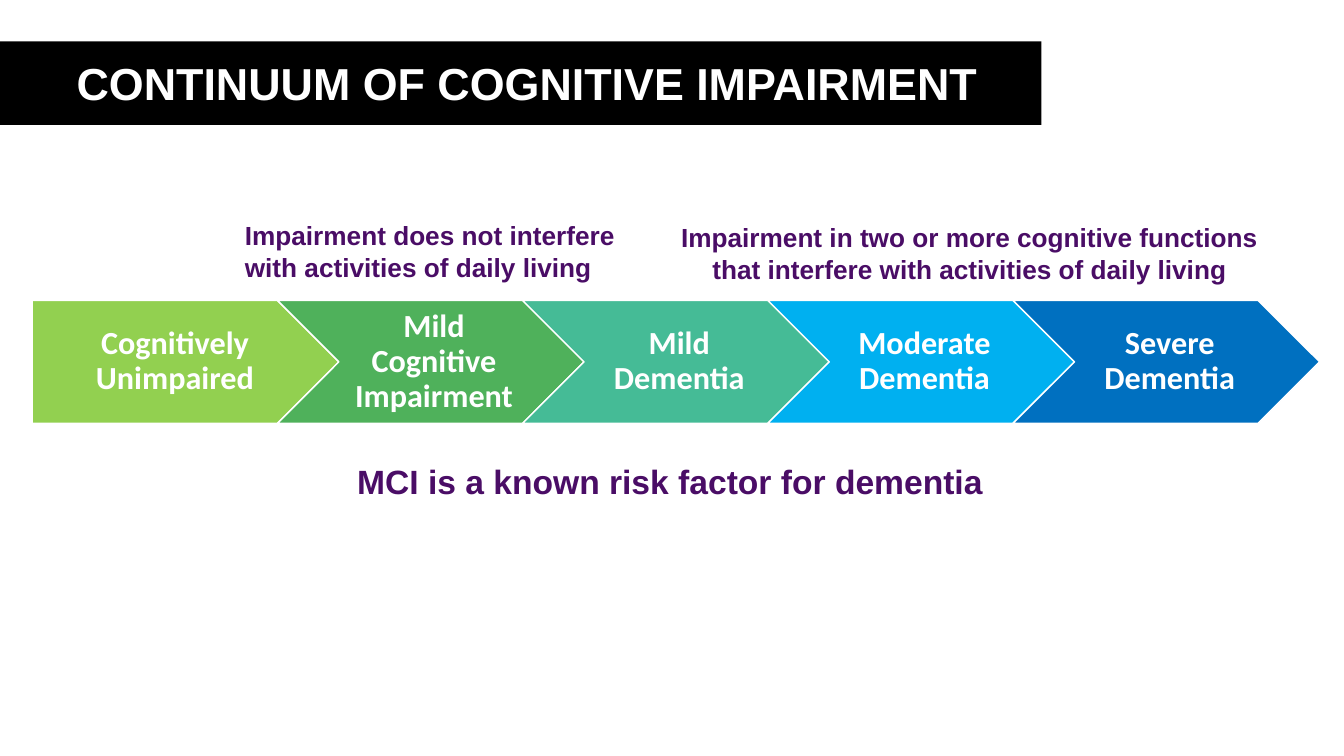
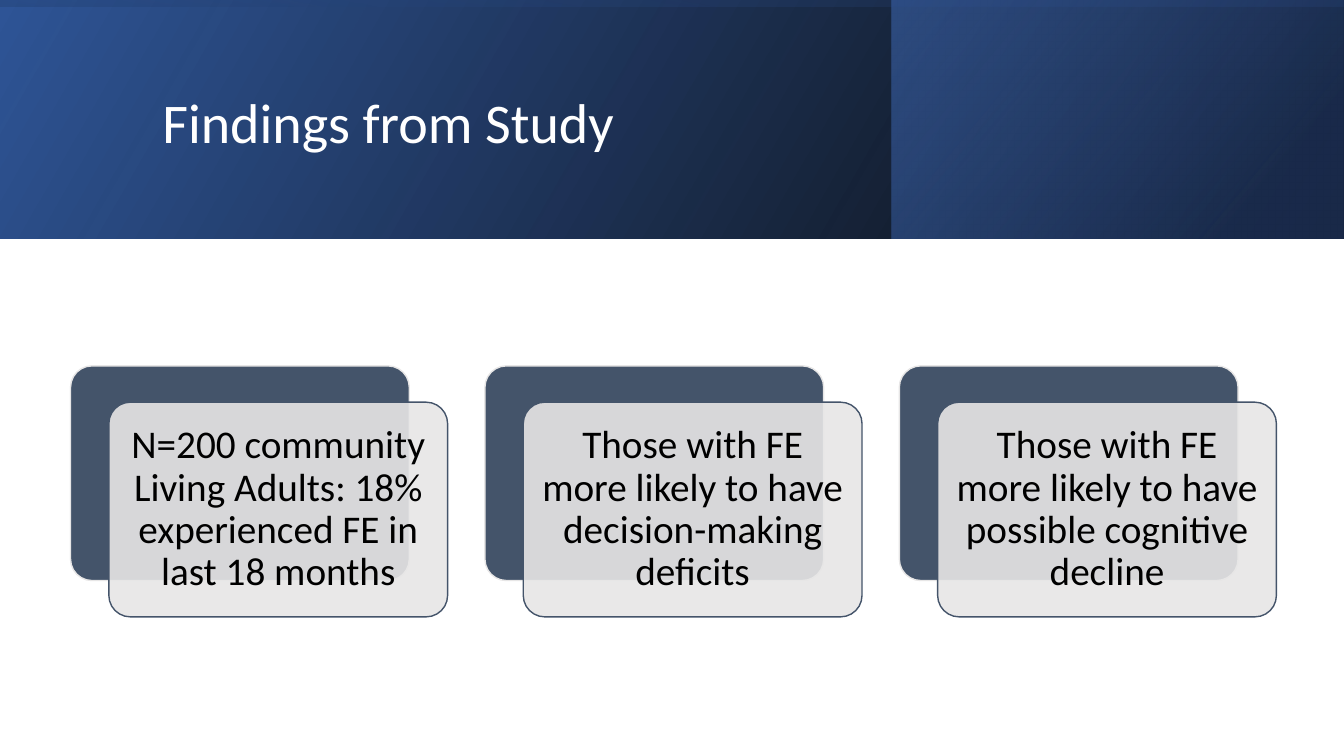
from dataclasses import dataclass

from lxml import etree
from pptx import Presentation, util as u
from pptx.dml.color import RGBColor
from pptx.enum import shapes, text
from pptx.oxml import ns

SLIDE_WIDTH, SLIDE_HEIGHT = 13.33, 7.5
TITLE_ONLY = 5


@dataclass(frozen=True)
class Theme:
    heading_font: str = "Arial"
    body_font: str = "Calibri"
    white: str = "FFFFFF"
    black: str = "000000"
    purple: str = "4A0D66"
    slate: str = "44546A"
    pale: str = "E7E6E6"
    stage_fills: tuple = ("92D050", "4FB15B", "45BB96", "00B0F0", "0070C0")
    banner_title_size: float = 32
    study_title_size: float = 40
    stage_size: float = 23
    card_size: float = 28
    remark_size: float = 24
    note_size: float = 18.7


THEME = Theme()
CENTER, LEFT = text.PP_ALIGN.CENTER, text.PP_ALIGN.LEFT

STAGES = ("Cognitively Unimpaired", "Mild Cognitive Impairment", "Mild Dementia",
          "Moderate Dementia", "Severe Dementia")
FINDINGS = (
    "N=200 community Living Adults: 18% experienced FE in last 18 months",
    "Those with FE more likely to have decision-making deficits",
    "Those with FE more likely to have possible cognitive decline",
)

# Stop: position %, colour, opacity %
HEADER_LAYERS = (
    dict(box=(0, 0, SLIDE_WIDTH, 2.37), angle=330,
         stops=((0, "000000", 96), (100, "2F5597", 100))),
    dict(box=(8.84, 0, 4.48, 2.37), angle=320,
         stops=((19, "203864", 68), (100, "4472C4", 48))),
    dict(box=(5.48, -5.48, 2.37, SLIDE_WIDTH), angle=350, rotation=270,
         stops=((23, "2F5597", 16), (99, "000000", 45))),
)


def inches(box):
    return [u.Inches(length) for length in box]


def rgb(colour):
    return RGBColor.from_string(colour)


def set_opacity(colour_element, percent):
    alpha = etree.SubElement(colour_element, ns.qn("a:alpha"))
    alpha.set("val", str(percent * 1000))


def write(shape, wording, size, colour, font=THEME.body_font, bold=False, align=CENTER,
          insets=(0.1, 0.05, 0.1, 0.05), anchor=text.MSO_ANCHOR.MIDDLE, spacing=1.0, wrap=True):
    frame = shape.text_frame
    frame.text = wording
    frame.auto_size = text.MSO_AUTO_SIZE.NONE
    frame.word_wrap = wrap
    frame.vertical_anchor = anchor
    (frame.margin_left, frame.margin_top,
     frame.margin_right, frame.margin_bottom) = inches(insets)
    paragraph = frame.paragraphs[0]
    paragraph.alignment = align
    paragraph.line_spacing = spacing
    paragraph.font.name = font
    paragraph.font.size = u.Pt(size)
    paragraph.font.bold = bold
    paragraph.font.color.rgb = rgb(colour)
    return paragraph


def add_block(slide, kind, box, fill=None, line=None, opacity=100):
    shape = slide.shapes.add_shape(kind, *inches(box))
    shape.shadow.inherit = False
    if fill:
        shape.fill.solid()
        shape.fill.fore_color.rgb = rgb(fill)
        if opacity < 100:
            set_opacity(shape._element.spPr.find(ns.qn("a:solidFill"))[0], opacity)
    if line:
        shape.line.color.rgb = rgb(line)
        shape.line.width = u.Pt(1)
    else:
        shape.line.fill.background()
    return shape


def add_gradient_layer(slide, box, angle, stops, rotation=0):
    """Add a mirrored rectangle whose gradient stops have their own opacity."""
    layer = add_block(slide, shapes.MSO_SHAPE.RECTANGLE, box)
    layer.rotation = rotation
    properties = layer._element.spPr
    properties.find(ns.qn("a:xfrm")).set("flipH", "1")
    gradient = etree.Element(ns.qn("a:gradFill"), rotWithShape="1")
    stop_list = etree.SubElement(gradient, ns.qn("a:gsLst"))
    for position, colour, opacity in stops:
        stop = etree.SubElement(stop_list, ns.qn("a:gs"), pos=str(position * 1000))
        set_opacity(etree.SubElement(stop, ns.qn("a:srgbClr"), val=colour), opacity)
    etree.SubElement(gradient, ns.qn("a:lin"), ang=str(angle * 60000), scaled="0")
    properties.find(ns.qn("a:prstGeom")).addnext(gradient)


def add_note(slide, box, wording, size, align=CENTER):
    note = slide.shapes.add_textbox(*inches(box))
    write(note, wording, size, THEME.purple, THEME.heading_font, bold=True,
          align=align, anchor=text.MSO_ANCHOR.TOP)


def place_title(slide, box, wording, size, **style):
    """Fill the title placeholder and bring it in front of its band."""
    title = slide.shapes.title
    title.left, title.top, title.width, title.height = inches(box)
    write(title, wording, size, THEME.white, align=LEFT, **style)
    slide.shapes._spTree.append(title._element)


def add_stages(slide, left, top, width, height):
    step = 0.8 * width
    for index, (wording, fill) in enumerate(zip(STAGES, THEME.stage_fills)):
        first = index == 0
        kind = shapes.MSO_SHAPE.PENTAGON if first else shapes.MSO_SHAPE.CHEVRON
        stage = add_block(slide, kind, (left + index * step, top, width, height),
                          fill, THEME.white)
        write(stage, wording, THEME.stage_size, THEME.white, bold=True, spacing=0.9,
              insets=(0.13 if first else 0.1, 0.07, 0.03, 0.07))


def add_finding(slide, left, top, wording):
    width, height, shift_x, shift_y = 3.36, 2.13, 0.38, 0.36
    rounded = shapes.MSO_SHAPE.ROUNDED_RECTANGLE
    back = add_block(slide, rounded, (left, top, width, height), THEME.slate, THEME.pale)
    front = add_block(slide, rounded, (left + shift_x, top + shift_y, width, height),
                      THEME.pale, THEME.slate, opacity=90)
    for card in (back, front):
        card.adjustments[0] = 0.1
    write(front, wording, THEME.card_size, THEME.black, insets=(0.12,) * 4, spacing=0.9)


def build_continuum(slide):
    add_stages(slide, 0.32, 2.98, 3.04, 1.22)
    add_note(slide, (0.07, 4.52, 13.15, 0.5), "MCI is a known risk factor for dementia",
             THEME.remark_size)
    add_note(slide, (2.33, 2.13, 4.05, 0.73),
             "Impairment does not interfere with activities of daily living",
             THEME.note_size, LEFT)
    add_note(slide, (6.56, 2.15, 6.11, 0.73),
             "Impairment in two or more cognitive functions that interfere "
             "with activities of daily living", THEME.note_size)
    add_block(slide, shapes.MSO_SHAPE.RECTANGLE, (0, 0.41, 10.33, 0.83), THEME.black)
    place_title(slide, (0.76, 0.55, 9.01, 0.54), "CONTINUUM OF COGNITIVE IMPAIRMENT",
                THEME.banner_title_size, font=THEME.heading_font, bold=True,
                insets=(0,) * 4, wrap=False)


def build_findings(slide):
    for layer in HEADER_LAYERS:
        add_gradient_layer(slide, **layer)
    place_title(slide, (1.51, 0.38, 10.63, 1.72), "Findings from Study",
                THEME.study_title_size, spacing=0.9)
    for column, wording in enumerate(FINDINGS):
        add_finding(slide, 0.7 + column * 4.11, 3.63, wording)


def main():
    presentation = Presentation()
    presentation.slide_width, presentation.slide_height = inches((SLIDE_WIDTH, SLIDE_HEIGHT))
    layout = presentation.slide_layouts[TITLE_ONLY]
    for build in (build_continuum, build_findings):
        build(presentation.slides.add_slide(layout))
    presentation.save("out.pptx")


if __name__ == "__main__":
    main()
